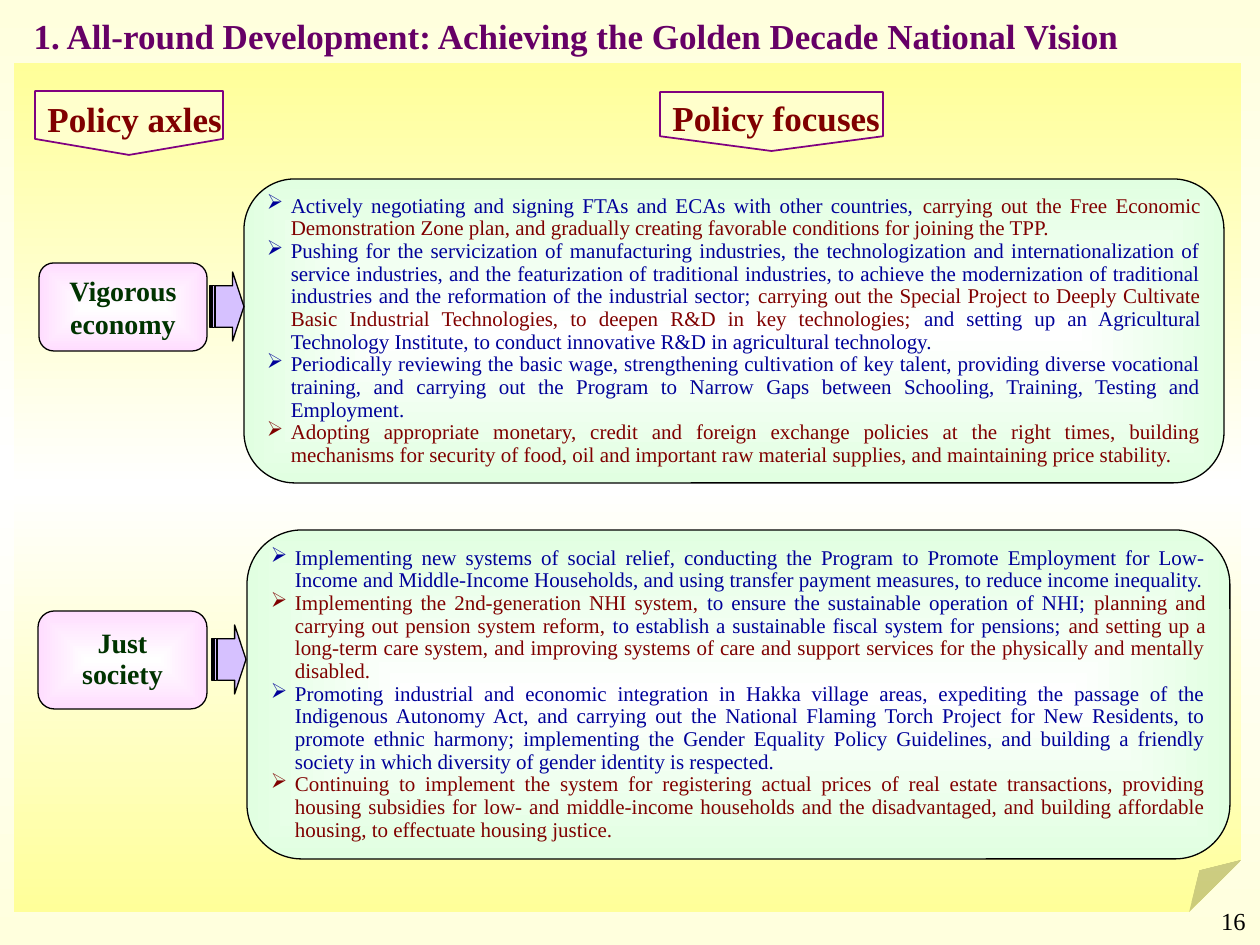
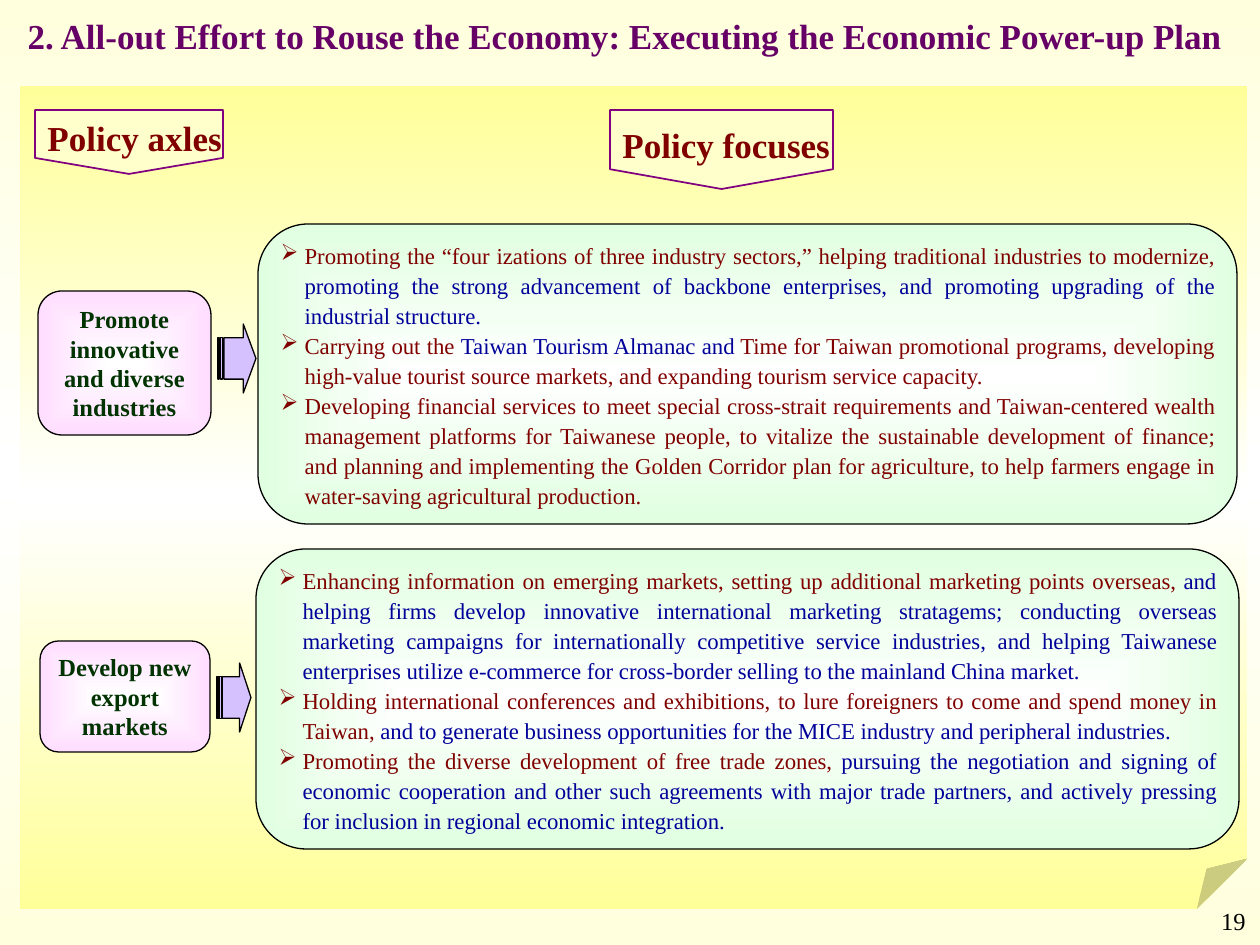
"""Build two policy slides, each pairing policy axles with their policy focuses."""
from lxml.etree import SubElement
from pptx import Presentation
from pptx.dml.color import RGBColor
from pptx.enum.shapes import MSO_SHAPE
from pptx.enum.text import MSO_ANCHOR, MSO_AUTO_SIZE, PP_ALIGN
from pptx.oxml.ns import qn
from pptx.util import Pt

PX = 914400 / 126
NAVY, MAROON, GREEN, PLUM, BLACK = "000099", "800000", "003300", "660066", "000000"
PAGE = ["FFFFDD", "FFFFFF", "FFFFDD"]
CARD = ["FFFF99", "FFFFFF", "FFFF99"]
MINT = ["FFFFFF", "E1FFE1"]
PINK = ["FFFFFF", "FFDDFF"]


def paint(target, fill, line=None, width=0.75):
    """Fill with one hex colour, a vertical list of three or a centred list of two."""
    if isinstance(fill, str):
        target.fill.solid()
        target.fill.fore_color.rgb = RGBColor.from_string(fill)
    else:
        target.fill.gradient()
        gradient = next(target._element.iter(qn("a:gradFill")))
        gradient.clear()
        stops = SubElement(gradient, qn("a:gsLst"))
        for i, colour in enumerate(fill):
            stop = SubElement(stops, qn("a:gs"), pos=str(100000 * i // (len(fill) - 1)))
            SubElement(stop, qn("a:srgbClr"), val=colour)
        if len(fill) == 3:
            SubElement(gradient, qn("a:lin"), ang="5400000", scaled="1")
        else:
            centre = SubElement(gradient, qn("a:path"), path="shape")
            SubElement(centre, qn("a:fillToRect"), l="50000", t="50000", r="50000", b="50000")
    if hasattr(target, "shadow"):
        target.shadow.inherit = False
        if line:
            target.line.color.rgb = RGBColor.from_string(line)
            target.line.width = Pt(width)
        else:
            target.line.fill.background()


def write(shape, text, size=12, colour=BLACK, bold=False, align=PP_ALIGN.CENTER,
          spacing=1.0, anchor=MSO_ANCHOR.MIDDLE, wrap=True, bullet=None):
    """Write a string, or a list of paragraphs made of (colour, words) runs."""
    frame = shape.text_frame
    frame.auto_size = MSO_AUTO_SIZE.NONE
    frame.word_wrap = wrap
    frame.vertical_anchor = anchor
    if bullet:
        frame.margin_left = frame.margin_right = round(8 * PX)
        frame.margin_top = frame.margin_bottom = 0
    paragraphs = [[(colour, text)]] if isinstance(text, str) else text
    for i, runs in enumerate(paragraphs):
        paragraph = frame.add_paragraph() if i else frame.paragraphs[0]
        paragraph.alignment = align
        paragraph.line_spacing = spacing
        paragraph.space_before = Pt(0)
        if bullet:
            properties = paragraph._p.get_or_add_pPr()
            properties.set("marL", str(round(24 * PX)))
            properties.set("indent", str(round(-24 * PX)))
            SubElement(properties, qn("a:buChar"), char=bullet)
        for run_colour, words in runs:
            run = paragraph.add_run()
            run.text = words
            run.font.name = "Times New Roman"
            run.font.size = Pt(size)
            run.font.bold = bold
            paint(run.font, run_colour)


economy = [
    [(NAVY, "Actively negotiating and signing FTAs and ECAs with other countries, "),
     (MAROON, "carrying out the Free Economic Demonstration Zone plan, and gradually creating "
              "favorable conditions for joining the TPP.")],
    [(NAVY, "Pushing for the servicization of manufacturing industries, the technologization and "
            "internationalization of service industries, and the featurization of traditional "
            "industries, to achieve the modernization of traditional industries and the "
            "reformation of the industrial sector; "),
     (MAROON, "carrying out the Special Project to Deeply Cultivate Basic Industrial "
              "Technologies, to deepen R&D in key technologies; "),
     (NAVY, "and setting up an Agricultural Technology Institute, to conduct innovative R&D in "
            "agricultural technology.")],
    [(NAVY, "Periodically reviewing the basic wage, strengthening cultivation of key talent, "
            "providing diverse vocational training, and carrying out the Program to Narrow Gaps "
            "between Schooling, Training, Testing and Employment.")],
    [(MAROON, "Adopting appropriate monetary, credit and foreign exchange policies at the right "
              "times, building mechanisms for security of food, oil and important raw material "
              "supplies, and maintaining price stability.")],
]
society = [
    [(NAVY, "Implementing new systems of social relief, conducting the Program to Promote "
            "Employment for Low-Income and Middle-Income Households, and using transfer payment "
            "measures, to reduce income inequality.")],
    [(MAROON, "Implementing the 2nd-generation NHI system, "),
     (NAVY, "to ensure the sustainable operation of NHI; "),
     (MAROON, "planning and carrying out pension system reform, "),
     (NAVY, "to establish a sustainable fiscal system for pensions; "),
     (MAROON, "and setting up a long-term care system, and improving systems of care and support "
              "services for the physically and mentally disabled.")],
    [(NAVY, "Promoting industrial and economic integration in Hakka village areas, expediting the "
            "passage of the Indigenous Autonomy Act, and carrying out the National Flaming Torch "
            "Project for New Residents, to promote ethnic harmony; implementing the Gender "
            "Equality Policy Guidelines, and building a friendly society in which diversity of "
            "gender identity is respected.")],
    [(MAROON, "Continuing to implement the system for registering actual prices of real estate "
              "transactions, providing housing subsidies for low- and middle-income households "
              "and the disadvantaged, and building affordable housing, to effectuate housing "
              "justice.")],
]
industries = [
    [(MAROON, "Promoting the “four izations of three industry sectors,” helping traditional "
              "industries to modernize, "),
     (NAVY, "promoting the strong advancement of backbone enterprises, and promoting upgrading "
            "of the industrial structure.")],
    [(MAROON, "Carrying out the "),
     (NAVY, "Taiwan Tourism Almanac and"),
     (MAROON, " Time for Taiwan promotional programs, developing high-value tourist source "
              "markets, and expanding tourism service capacity.")],
    [(MAROON, "Developing financial services to meet special cross-strait requirements and "
              "Taiwan-centered wealth management platforms for Taiwanese people, to vitalize the "
              "sustainable development of finance; and planning and implementing the Golden "
              "Corridor plan for agriculture, to help farmers engage in water-saving "
              "agricultural production.")],
]
markets = [
    [(MAROON, "Enhancing information on emerging markets, setting up additional marketing points "
              "overseas, "),
     (NAVY, "and helping firms develop innovative international marketing stratagems; conducting "
            "overseas marketing campaigns for internationally competitive service industries, "
            "and helping Taiwanese enterprises utilize e-commerce for cross-border selling to "
            "the mainland China market.")],
    [(MAROON, "Holding international conferences and exhibitions, to lure foreigners to come and "
              "spend money in Taiwan, "),
     (NAVY, "and to generate business opportunities for the MICE industry and peripheral "
            "industries.")],
    [(MAROON, "Promoting the diverse development of free trade zones, "),
     (NAVY, "pursuing the negotiation and signing of economic cooperation and other such "
            "agreements with major trade partners, and actively pressing for inclusion in "
            "regional economic integration.")],
]

plans = [
    dict(title="1. All-round Development: Achieving the Golden Decade National Vision",
         title_box=(21, 16, 1236, 47), number="16", card=(14, 63, 1227, 849),
         headers=[("Policy axles", (97, 29, 64, 188)), ("Policy focuses", (742, 10, 59, 223))],
         axle_size=16, focus_size=12, focus_spacing=0.9,
         rows=[("Vigorous economy", 1.0, (39, 263, 168, 88), (210, 272, 34, 69),
                economy, (244, 179, 980, 304)),
               ("Just society", 0.9, (38, 611, 169, 98), (212, 625, 34, 69),
                society, (247, 530, 983, 329))]),
    dict(title="2. All-out Effort to Rouse the Economy: Executing the Economic Power-up Plan",
         title_box=(15, 16, 1221, 47), number="19", card=(20, 86, 1227, 823),
         headers=[("Policy axles", (97, 48, 64, 188)), ("Policy focuses", (682, 38, 79, 223))],
         axle_size=14, focus_size=13, focus_spacing=1.1,
         rows=[("Promote innovative and diverse industries", 1.0, (38, 291, 173, 144),
                (218, 324, 38, 69), industries, (258, 224, 979, 300)),
               ("Develop new export markets", 1.0, (40, 641, 170, 111),
                (217, 663, 34, 69), markets, (256, 549, 983, 300))]),
]

head = [(2 / 3, 0), (2 / 3, 0.2), (5 / 32, 0.2), (5 / 32, 0.8), (2 / 3, 0.8), (2 / 3, 1), (1, 0.5)]
stripes = [[(a, 0.2), (a, 0.8), (b, 0.8), (b, 0.2)] for a, b in ((1 / 16, 1 / 8), (0, 1 / 32))]

deck = Presentation()
deck.slide_width = round(1260 * PX)
deck.slide_height = round(945 * PX)
paint(deck.slide_master.background, PAGE)

for plan in plans:
    slide = deck.slides.add_slide(deck.slide_layouts[5])
    shapes = slide.shapes
    title = shapes.title
    title.left, title.top, title.width, title.height = [round(v * PX) for v in plan["title_box"]]
    write(title, plan["title"], size=20, colour=PLUM, bold=True, align=PP_ALIGN.LEFT,
          spacing=0.8, anchor=MSO_ANCHOR.TOP)

    card = shapes.add_shape(MSO_SHAPE.FOLDED_CORNER, *[round(v * PX) for v in plan["card"]])
    fold = card._element.spPr.find(qn("a:prstGeom")).get_or_add_avLst()
    SubElement(fold, qn("a:gd"), name="adj", fmla="val 6100")
    paint(card, CARD)

    for heading, box in plan["headers"]:
        header = shapes.add_shape(MSO_SHAPE.PENTAGON, *[round(v * PX) for v in box])
        header.adjustments[0] = 0.25
        header.rotation = 90
        paint(header, "FFFFCC", "800080", 1)
        write(header, heading, size=20, colour=MAROON, bold=True, wrap=False)
        body = header.text_frame._txBody.bodyPr
        body.set("vert", "eaVert")
        body.set("rot", "10800000")

    for axle_name, axle_spacing, axle_box, arrow_box, focuses, focus_box in plan["rows"]:
        focus = shapes.add_shape(MSO_SHAPE.ROUNDED_RECTANGLE, *[round(v * PX) for v in focus_box])
        paint(focus, MINT, BLACK)
        write(focus, focuses, size=plan["focus_size"], align=PP_ALIGN.JUSTIFY,
              spacing=plan["focus_spacing"], bullet="➢")

        axle = shapes.add_shape(MSO_SHAPE.ROUNDED_RECTANGLE, *[round(v * PX) for v in axle_box])
        paint(axle, PINK, BLACK)
        write(axle, axle_name, size=plan["axle_size"], colour=GREEN, bold=True,
              spacing=axle_spacing)

        left, top, width, height = arrow_box
        outlines = [[(round((left + x * width) * PX), round((top + y * height) * PX))
                     for x, y in part] for part in [head, *stripes]]
        builder = shapes.build_freeform(*outlines[0][0])
        builder.add_line_segments(outlines[0][1:])
        for outline in outlines[1:]:
            builder.move_to(*outline[0])
            builder.add_line_segments(outline[1:])
        paint(builder.convert_to_shape(), "D6C1FF", BLACK)

    page_number = shapes.add_textbox(*[round(v * PX) for v in (964, 900, 294, 65)])
    write(page_number, plan["number"], size=14, align=PP_ALIGN.RIGHT, anchor=MSO_ANCHOR.TOP)

deck.save("out.pptx")
